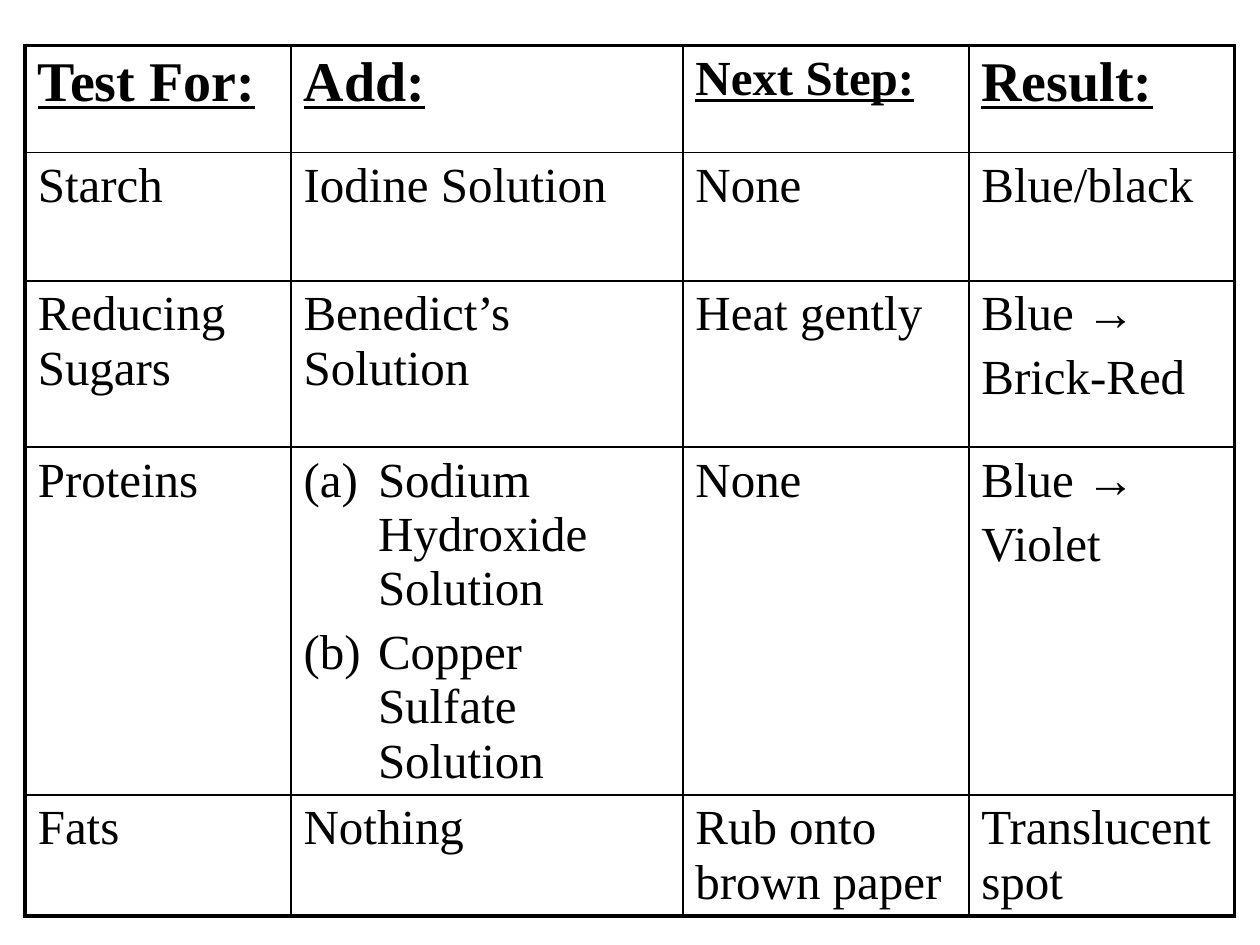
from dataclasses import dataclass

from lxml.etree import SubElement
from pptx import Presentation
from pptx.dml.color import RGBColor
from pptx.oxml.ns import qn
from pptx.util import Inches, Pt


@dataclass(frozen=True)
class Theme:
    ink: str = "000000"
    font: str = "Times New Roman"
    heading_size: int = 32
    body_size: int = 28
    outer_line: float = 2.25
    inner_line: float = 1
    space_before: int = 20
    list_indent: float = 0.59


THEME = Theme()
COLUMN_WIDTHS = [2.11, 3.11, 2.27, 2.11]
ROW_HEIGHTS = [0.85, 1.02, 1.32, 2.74, 0.76]
HEADINGS = ["Test For:", "Add:", "Next Step:", "Result:"]
SMALL_HEADING = "Next Step:"
FOOD_TESTS = [
    ["Starch", "Iodine Solution", "None", "Blue/black"],
    ["Reducing Sugars", "Benedict’s Solution", "Heat gently", "Blue →\nBrick-Red"],
    ["Proteins", ["Sodium Hydroxide Solution", "Copper Sulfate Solution"],
     "None", "Blue →\nViolet"],
    ["Fats", "Nothing", "Rub onto brown paper", "Translucent spot"],
]


def set_border(cell, side, width):
    line = SubElement(cell._tc.get_or_add_tcPr(), qn(f"a:ln{side}"), w=str(Pt(width)))
    fill = SubElement(line, qn("a:solidFill"))
    SubElement(fill, qn("a:srgbClr"), val=THEME.ink)


def set_borders(cell, row, column):
    outer_sides = {
        "L": column == 0,
        "R": column == len(COLUMN_WIDTHS) - 1,
        "T": row == 0,
        "B": row == len(ROW_HEIGHTS) - 1,
    }
    for side, is_outer in outer_sides.items():
        set_border(cell, side, THEME.outer_line if is_outer else THEME.inner_line)


def format_paragraph(paragraph, lettered):
    properties = paragraph._p.get_or_add_pPr()
    spacing = SubElement(properties, qn("a:spcBef"))
    SubElement(spacing, qn("a:spcPct"), val=str(THEME.space_before * 1000))
    if lettered:
        indent = Inches(THEME.list_indent)
        properties.set("marL", str(indent))
        properties.set("indent", str(-indent))
        SubElement(properties, qn("a:buAutoNum"), type="alphaLcParenBoth")


def write_cell(cell, content, font_format):
    lettered = isinstance(content, list)
    lines = content if lettered else content.split("\n")
    text_frame = cell.text_frame
    text_frame.text = "\n".join(lines)
    for paragraph in text_frame.paragraphs:
        format_paragraph(paragraph, lettered)
        font = paragraph.runs[0].font
        for name, value in font_format.items():
            setattr(font, name, value)
        font.color.rgb = RGBColor.from_string(THEME.ink)


def font_format_for(row, content):
    is_heading = row == 0
    is_large = is_heading and content != SMALL_HEADING
    return {
        "name": THEME.font,
        "size": Pt(THEME.heading_size if is_large else THEME.body_size),
        "bold": is_heading,
        "underline": is_heading,
    }


def add_food_test_table(slide):
    table = slide.shapes.add_table(
        len(ROW_HEIGHTS), len(COLUMN_WIDTHS), Inches(0.2), Inches(0.36),
        Inches(sum(COLUMN_WIDTHS)), Inches(sum(ROW_HEIGHTS))).table
    for name, value in {"first_row": False, "horz_banding": False}.items():
        setattr(table, name, value)
    for column, width in zip(table.columns, COLUMN_WIDTHS):
        column.width = Inches(width)
    for row, height in zip(table.rows, ROW_HEIGHTS):
        row.height = Inches(height)
    for row, contents in enumerate([HEADINGS, *FOOD_TESTS]):
        for column, content in enumerate(contents):
            cell = table.cell(row, column)
            write_cell(cell, content, font_format_for(row, content))
            set_borders(cell, row, column)
            cell.fill.background()


def main():
    presentation = Presentation()
    presentation.slide_width = Inches(10)
    presentation.slide_height = Inches(7.5)
    slide = presentation.slides.add_slide(presentation.slide_layouts[6])
    add_food_test_table(slide)
    presentation.save("out.pptx")


if __name__ == "__main__":
    main()
